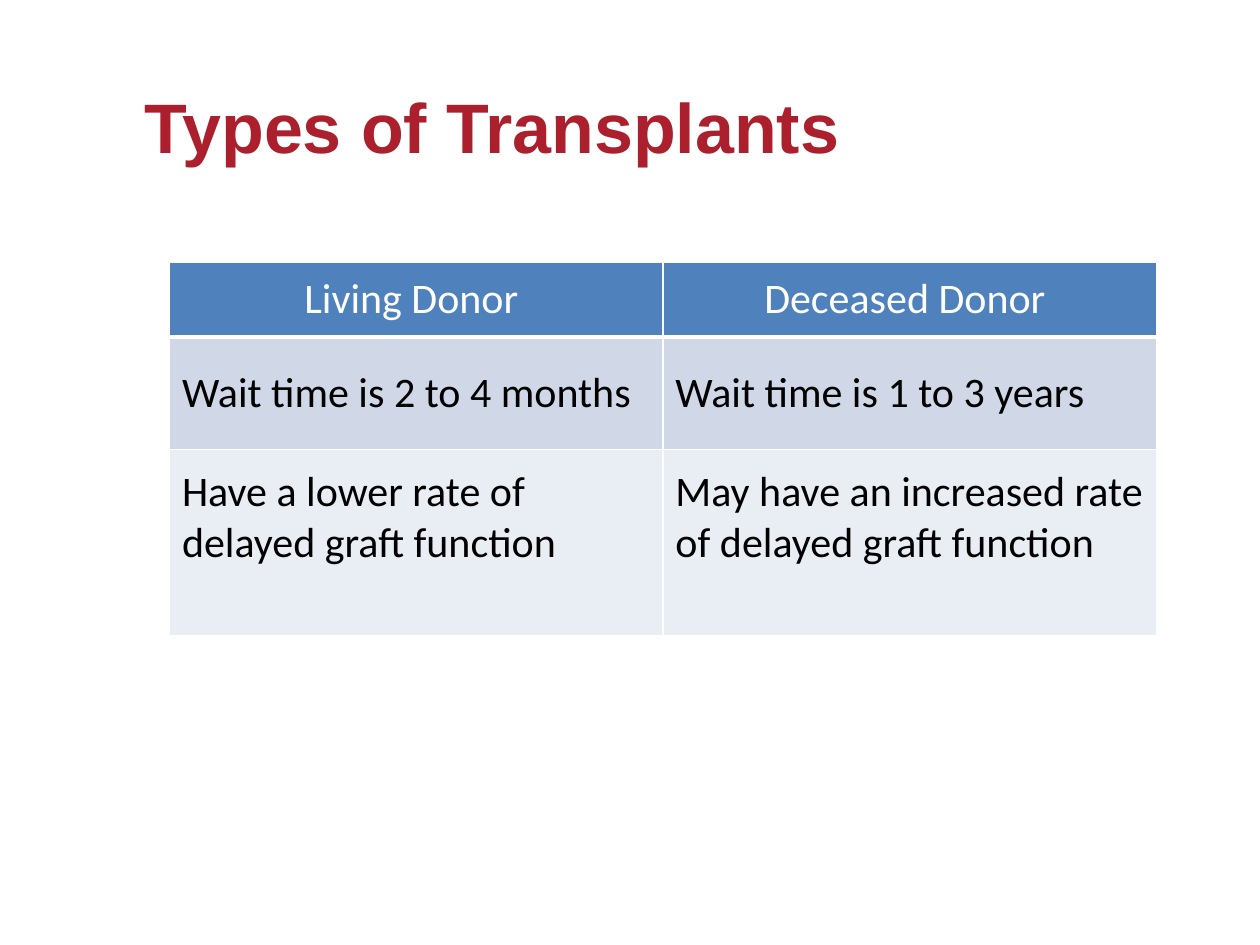
import pptx
import pptx.dml.color
import pptx.enum.text
import pptx.oxml
import pptx.oxml.ns
import pptx.util

Pt = pptx.util.Pt
RGBColor = pptx.dml.color.RGBColor
PP_ALIGN = pptx.enum.text.PP_ALIGN
MSO_ANCHOR = pptx.enum.text.MSO_ANCHOR

RED = RGBColor(0xAC, 0x1F, 0x2D)
BLUE = RGBColor(0x4F, 0x81, 0xBD)
BAND_DARK = RGBColor(0xD0, 0xD8, 0xE8)
BAND_LIGHT = RGBColor(0xE9, 0xED, 0xF4)
WHITE = RGBColor(0xFF, 0xFF, 0xFF)
BLACK = RGBColor(0, 0, 0)


def add_run(p, text, font, size, color, bold):
    r = p.add_run()
    r.text = text
    r.font.name = font
    r.font.size = Pt(size)
    r.font.color.rgb = color
    r.font.bold = bold


def set_borders(cell, widths):
    """Draw white borders; widths maps L, R, T, B to points, before the fill is set."""
    tc_pr = cell._tc.get_or_add_tcPr()
    for side, width in widths.items():
        tc_pr.append(pptx.oxml.parse_xml(
            f'<a:ln{side} {pptx.oxml.ns.nsdecls("a")} w="{Pt(width)}">'
            f'<a:solidFill><a:srgbClr val="{WHITE}"/></a:solidFill></a:ln{side}>'))


prs = pptx.Presentation()
prs.slide_width, prs.slide_height = Pt(720), Pt(540)
s = prs.slides.add_slide(prs.slide_layouts[5])

# Title
title = s.shapes.title
title.left, title.top, title.width, title.height = Pt(75.6), Pt(30.24), Pt(599), Pt(66.24)
tf = title.text_frame
tf.auto_size = pptx.enum.text.MSO_AUTO_SIZE.NONE
tf.word_wrap = True
tf.vertical_anchor = MSO_ANCHOR.BOTTOM
tf.margin_left = tf.margin_right = Pt(7.2)
tf.margin_top = tf.margin_bottom = 0
p = tf.paragraphs[0]
p.alignment = PP_ALIGN.LEFT
p.line_spacing = 0.9
add_run(p, "Types of Transplants", "Arial", 40, RED, True)

# Donor comparison: height, fill, text colour, alignment, bottom margin, texts
rows = [
    (42.5, BLUE, WHITE, PP_ALIGN.CENTER, 3.6,
     ("Living Donor ", "Deceased Donor ")),
    (64.3, BAND_DARK, BLACK, PP_ALIGN.LEFT, 3.6,
     ("Wait time is 2 to 4 months", "Wait time is 1 to 3 years")),
    (106.5, BAND_LIGHT, BLACK, PP_ALIGN.LEFT, 32.4,
     ("Have a lower rate of delayed graft function",
      "May have an increased rate of delayed graft function")),
]
table = s.shapes.add_table(len(rows), 2, Pt(96.8), Pt(150), Pt(564), Pt(213.3)).table
for column in table.columns:
    column.width = Pt(282)

for i, (height, fill, color, align, bottom, texts) in enumerate(rows):
    table.rows[i].height = Pt(height)
    for j, text in enumerate(texts):
        cell = table.cell(i, j)
        set_borders(cell, {"L": 1, "R": 1, "T": 1, "B": 3 if i == 0 else 1})
        cell.fill.solid()
        cell.fill.fore_color.rgb = fill
        cell.vertical_anchor = MSO_ANCHOR.MIDDLE
        cell.margin_bottom = Pt(bottom)
        p = cell.text_frame.paragraphs[0]
        p.alignment = align
        add_run(p, text, "Calibri", 24, color, False)

prs.save("out.pptx")
